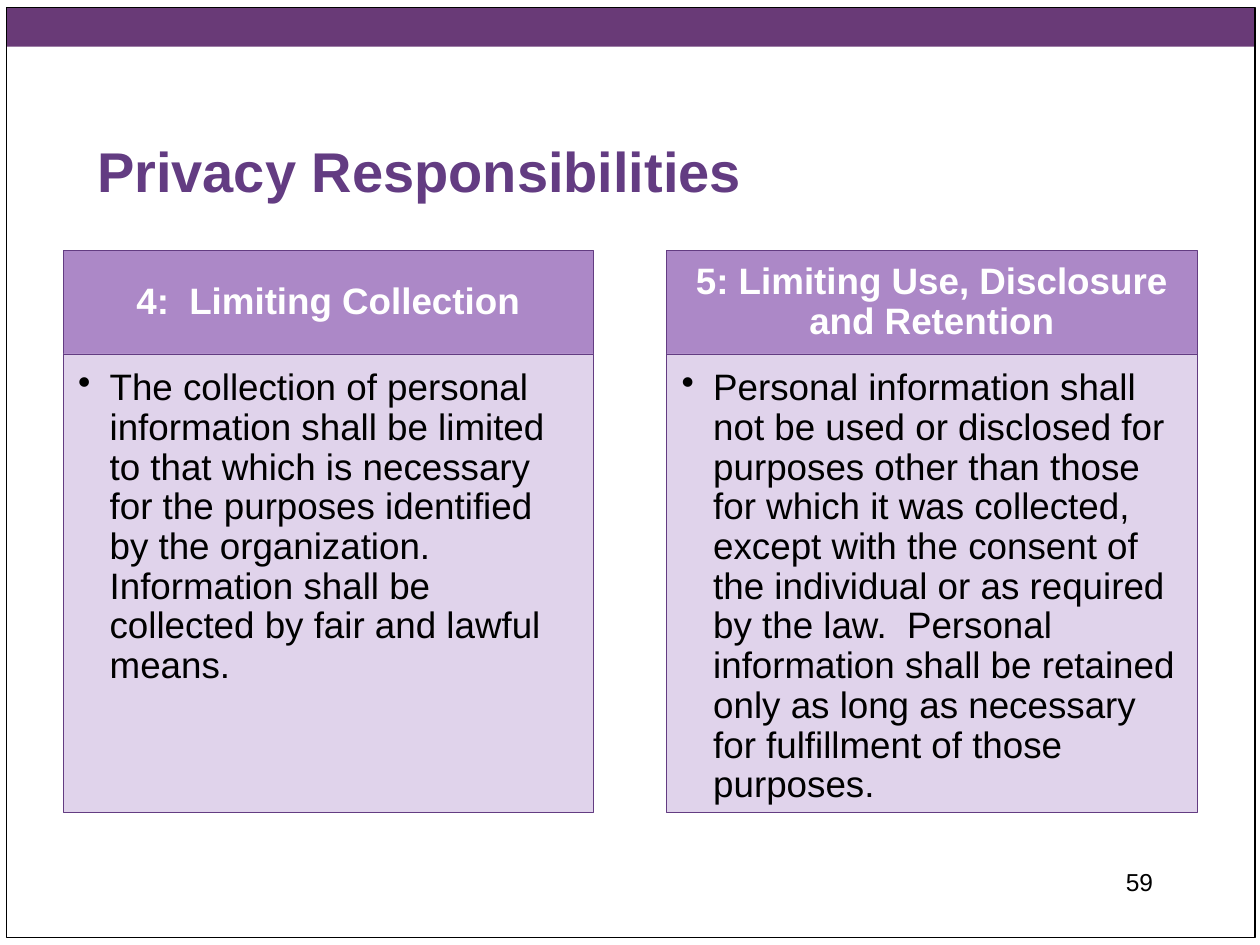
import pptx
import pptx.util
import pptx.dml.color
import pptx.enum.shapes
import pptx.enum.text
import pptx.oxml.ns
import lxml.etree

Inches = pptx.util.Inches
Align = pptx.enum.text.PP_ALIGN
Anchor = pptx.enum.text.MSO_ANCHOR

# Content
TITLE = "Privacy Responsibilities"
PAGE_NUMBER = "59"
COLUMNS = [
    ("4:  Limiting Collection",
     "The collection of personal information shall be limited to that which is "
     "necessary for the purposes identified by the organization.  Information "
     "shall be collected by fair and lawful means."),
    ("5: Limiting Use, Disclosure and Retention",
     "Personal information shall not be used or disclosed for purposes other "
     "than those for which it was collected, except with the consent of the "
     "individual or as required by the law.  Personal information shall be "
     "retained only as long as necessary for fulfillment of those purposes."),
]

# Layout and palette
WIDTH, HEIGHT = 10, 7.5
MARGIN, COLUMN_WIDTH, TOP = 0.5, 4.21, 1.99
HEADER_HEIGHT, BODY_HEIGHT = 0.82, 3.64
BAND, PURPLE, HEADER, BODY = "693A77", "633C82", "A37CC2", "E0D3EB"
BLACK, WHITE = "000000", "FFFFFF"


def color(value):
    return pptx.dml.color.RGBColor.from_string(value)


def add_child(parent, tag, **attributes):
    return lxml.etree.SubElement(parent, pptx.oxml.ns.qn(tag), attributes)


def add_box(page, area, fill=None, line=None, line_width=0.5, opacity=None):
    box = page.shapes.add_shape(pptx.enum.shapes.MSO_SHAPE.RECTANGLE,
                                *map(Inches, area))
    box.shadow.inherit = False
    if fill:
        box.fill.solid()
        box.fill.fore_color.rgb = color(fill)
        if opacity:
            fill_color = box.fill._xPr.find(".//" + pptx.oxml.ns.qn("a:srgbClr"))
            add_child(fill_color, "a:alpha", val=str(opacity * 1000))
    else:
        box.fill.background()
    if line:
        box.line.color.rgb = color(line)
        box.line.width = pptx.util.Pt(line_width)
    else:
        box.line.fill.background()
    return box


def write(box, text, size=21, ink=BLACK, bold=False, align=Align.LEFT,
          anchor=Anchor.TOP, insets=(0.1, 0.05, 0.1, 0.05), spacing=None,
          bullet=False):
    frame = box.text_frame
    frame.word_wrap = True
    frame.auto_size = pptx.enum.text.MSO_AUTO_SIZE.NONE
    frame.vertical_anchor = anchor
    (frame.margin_left, frame.margin_top,
     frame.margin_right, frame.margin_bottom) = map(Inches, insets)
    para = frame.paragraphs[0]
    para.alignment = align
    if spacing:
        para.line_spacing = spacing
    if bullet:
        para.level = 1
        properties = para._p.get_or_add_pPr()
        properties.set("marL", str(Inches(0.25)))
        properties.set("indent", str(Inches(-0.25)))
        add_child(properties, "a:buChar", char="•")
    span = para.add_run()
    span.text = text
    span.font.name = "Arial"
    span.font.size = pptx.util.Pt(size)
    span.font.bold = bold
    span.font.color.rgb = color(ink)


def main():
    deck = pptx.Presentation()
    deck.slide_width, deck.slide_height = Inches(WIDTH), Inches(HEIGHT)
    page = deck.slides.add_slide(deck.slide_layouts[5])

    # Top band and page frame
    add_box(page, (0.05, 0.06, 9.91, 0.31), fill=BAND)
    add_box(page, (0.05, 0.06, 9.91, 7.38), line=BLACK, line_width=0.75)

    # Title
    title = page.shapes.title
    title.left, title.top, title.width, title.height = map(
        Inches, (0.67, 0.67, 8.5, 1))
    write(title, TITLE, size=32, ink=PURPLE, bold=True, anchor=Anchor.BOTTOM)

    # Two columns, each a header over a body
    step = (WIDTH - 2 * MARGIN - COLUMN_WIDTH) / (len(COLUMNS) - 1)
    for index, (heading, detail) in enumerate(COLUMNS):
        left = MARGIN + index * step
        header = add_box(page, (left, TOP, COLUMN_WIDTH, HEADER_HEIGHT),
                         fill=HEADER, line=PURPLE, opacity=90)
        write(header, heading, ink=WHITE, bold=True, align=Align.CENTER,
              anchor=Anchor.MIDDLE, insets=(0.16, 0.09, 0.16, 0.09), spacing=0.9)
        body = add_box(page, (left, TOP + HEADER_HEIGHT, COLUMN_WIDTH, BODY_HEIGHT),
                       fill=BODY, line=PURPLE)
        write(body, detail, insets=(0.12, 0.12, 0.16, 0.18), spacing=0.9,
              bullet=True)

    # Page number
    number = page.shapes.add_textbox(*map(Inches, (7.17, 6.83, 2.08, 0.5)))
    write(number, PAGE_NUMBER, size=14, align=Align.RIGHT)

    deck.save("out.pptx")


if __name__ == "__main__":
    main()
